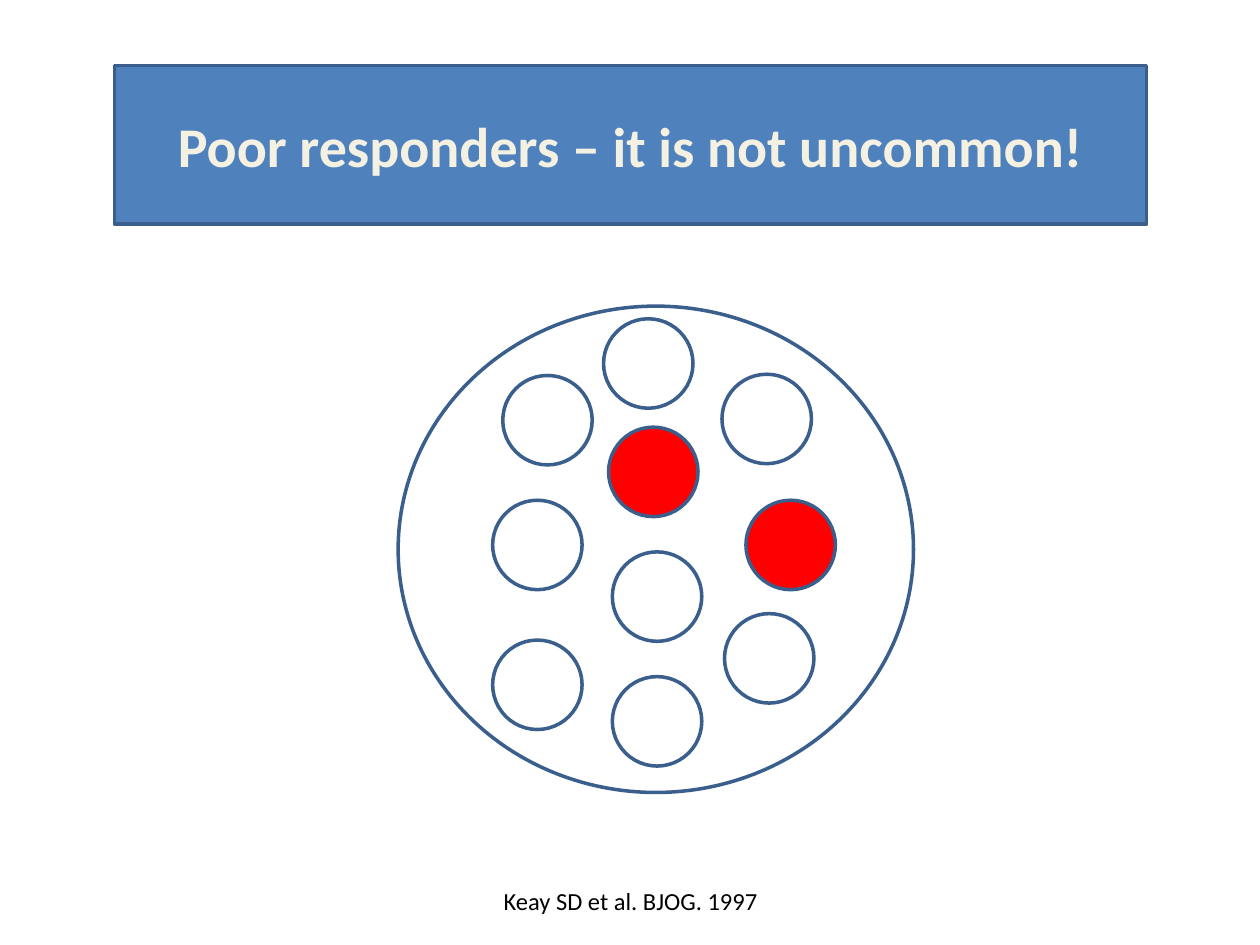
"""Build a slide on poor responders with a diagram of follicles in an ovary."""
from pptx import Presentation
from pptx.dml.color import RGBColor
from pptx.enum.shapes import MSO_SHAPE as Shape
from pptx.enum.text import MSO_ANCHOR as Anchor, MSO_AUTO_SIZE as AutoSize, PP_ALIGN as Align
from pptx.util import Inches, Pt

COLORS = {
    "banner": "4F81BD",
    "outline": "3A5F8C",
    "title": "F4F1E3",
    "responder": "FF0000",
    "text": "000000",
}
FOLLICLE_SIZE = 0.71
FOLLICLES = [
    (4.79, 2.53, None),
    (3.99, 2.98, None),
    (4.83, 3.39, "responder"),
    (4.86, 4.38, None),
    (4.86, 5.37, None),
    (5.92, 3.97, "responder"),
    (3.91, 3.97, None),
    (5.73, 2.97, None),
    (3.91, 5.08, None),
    (5.75, 4.87, None),
]


class SlideBuilder:
    def __init__(self, slide, font_name="Calibri", line_width=2):
        self.slide = slide
        self.font_name = font_name
        self.line_width = Pt(line_width)

    def color(self, name):
        return RGBColor.from_string(COLORS[name])

    def paint(self, shape, fill=None):
        if fill:
            shape.fill.solid()
            shape.fill.fore_color.rgb = self.color(fill)
        else:
            shape.fill.background()
        shape.line.color.rgb = self.color("outline")
        shape.line.width = self.line_width

    def set_text(self, shape, text, size, color, bold=False):
        frame = shape.text_frame
        frame.word_wrap = True
        frame.auto_size = AutoSize.NONE
        frame.vertical_anchor = Anchor.MIDDLE
        paragraph = frame.paragraphs[0]
        paragraph.text = text
        paragraph.alignment = Align.CENTER
        font = paragraph.font
        font.name, font.size, font.bold = self.font_name, Pt(size), bold
        font.color.rgb = self.color(color)

    def title(self, text, left, top, width, height):
        shape = self.slide.shapes.title
        shape.left, shape.top = Inches(left), Inches(top)
        shape.width, shape.height = Inches(width), Inches(height)
        self.paint(shape, "banner")
        self.set_text(shape, text, 32, "title", bold=True)

    def ellipse(self, group, left, top, width, height, fill=None):
        shape = group.shapes.add_shape(
            Shape.OVAL, Inches(left), Inches(top), Inches(width), Inches(height))
        shape.shadow.inherit = False
        self.paint(shape, fill)

    def ovary(self):
        group = self.slide.shapes.add_group_shape()
        self.ellipse(group, 3.16, 2.43, 4.09, 3.86)
        for left, top, fill in FOLLICLES:
            self.ellipse(group, left, top, FOLLICLE_SIZE, FOLLICLE_SIZE, fill)

    def citation(self, text, left, top, width, height):
        box = self.slide.shapes.add_textbox(
            Inches(left), Inches(top), Inches(width), Inches(height))
        self.set_text(box, text, 14, "text")


def main():
    presentation = Presentation()
    presentation.slide_width, presentation.slide_height = Inches(10), Inches(7.5)
    builder = SlideBuilder(presentation.slides.add_slide(presentation.slide_layouts[5]))
    builder.title("Poor responders – it is not uncommon!", 0.91, 0.52, 8.19, 1.26)
    builder.ovary()
    builder.citation("Keay SD et al. BJOG. 1997", 3.42, 6.95, 3.17, 0.4)
    presentation.save("out.pptx")


if __name__ == "__main__":
    main()
